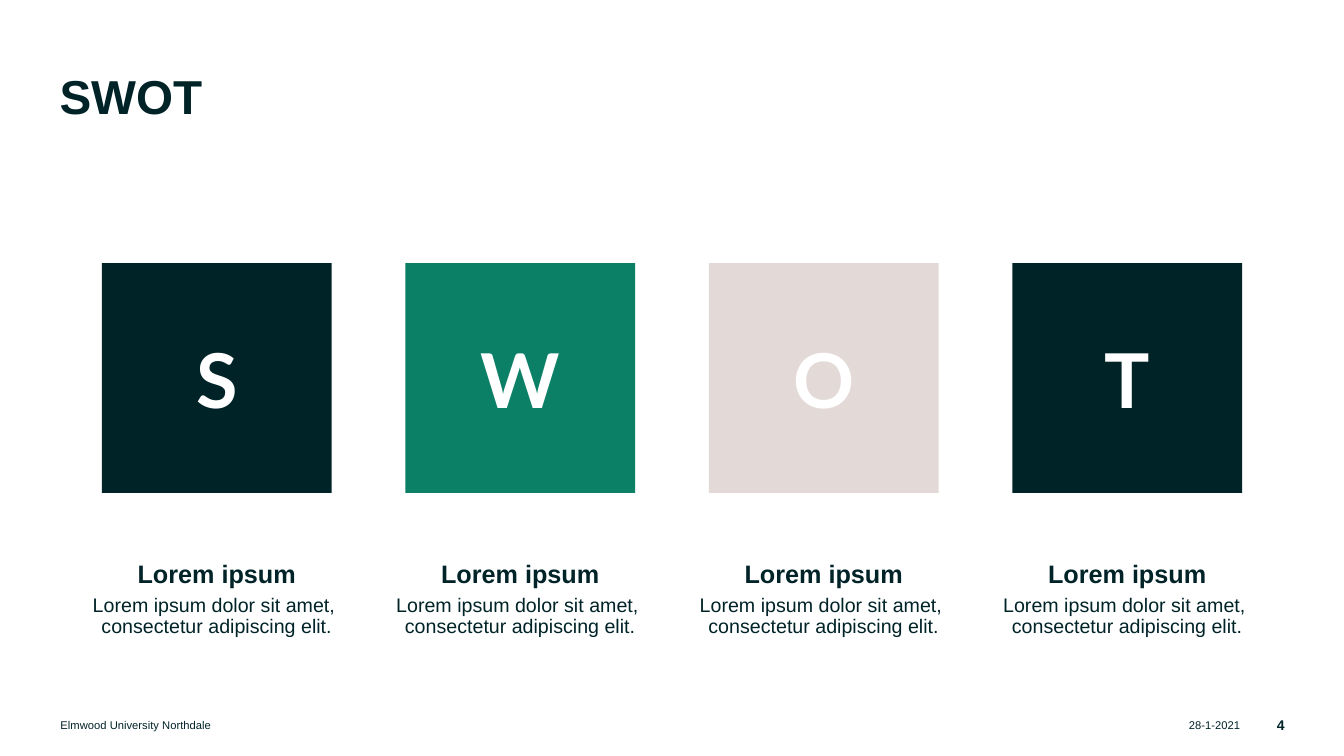
from copy import deepcopy

from pptx import Presentation
from pptx.dml.color import RGBColor
from pptx.enum.shapes import MSO_SHAPE as SHAPE
from pptx.enum.text import MSO_ANCHOR as ANCHOR, PP_ALIGN as ALIGN
from pptx.oxml.ns import qn
from pptx.util import Pt

PX = 9144  # 100 px to the inch
DARK, GREEN, SAND, WHITE = "002328", "0C8066", "E3DAD8", "FFFFFF"


def color(value):
    return RGBColor.from_string(value)


def write(sp, text, size, font="Arial", fill=DARK, bold=False, align=ALIGN.LEFT,
          anchor=ANCHOR.TOP, inset=0, spacing=None, before=0, more=False):
    """Write one paragraph into a shape; more=True adds it below the last."""
    tf = sp.text_frame
    tf.word_wrap = True
    tf.vertical_anchor = anchor
    tf.margin_left = tf.margin_top = tf.margin_right = tf.margin_bottom = inset * PX
    p = tf.add_paragraph() if more else tf.paragraphs[0]
    p.text = text
    p.alignment = align
    p.line_spacing = spacing
    p.space_before = Pt(before)
    for r in p.runs:
        r.font.name, r.font.size, r.font.bold = font, Pt(size), bold
        r.font.color.rgb = color(fill)
    # Line breaks take the format of the text around them
    for br in p._p.findall(qn("a:br")):
        br.insert(0, deepcopy(p.runs[0]._r.rPr))


prs = Presentation()
prs.slide_width, prs.slide_height = 1333 * PX, 750 * PX
s = prs.slides.add_slide(prs.slide_layouts[6])

# Title
title = s.shapes.add_textbox(59 * PX, 79 * PX, 1215 * PX, 78 * PX)
write(title, "SWOT", 34, bold=True, spacing=Pt(32))

# Footer: date, organisation, slide number
for text, left, width, size, bold, align in [
    ("28-1-2021", 1154, 76, 8, False, ALIGN.RIGHT),
    ("Elmwood University Northdale", 60, 1079, 8, False, ALIGN.LEFT),
    ("4", 1245, 29, 10, True, ALIGN.RIGHT),
]:
    footer = s.shapes.add_textbox(left * PX, 712 * PX, width * PX, 14 * PX)
    write(footer, text, size, bold=bold, align=align, anchor=ANCHOR.MIDDLE)

# Four columns: lettered square with a caption below
for i, (letter, fill) in enumerate(zip("SWOT", [DARK, GREEN, SAND, DARK])):
    left = 101 + 301 * i
    square = s.shapes.add_shape(SHAPE.RECTANGLE, left * PX, 261 * PX, 228 * PX, 228 * PX)
    square.shadow.inherit = False
    square.fill.solid()
    square.fill.fore_color.rgb = color(fill)
    square.line.fill.background()
    write(square, letter, 54, font="Lato", fill=WHITE, bold=True,
          align=ALIGN.CENTER, anchor=ANCHOR.MIDDLE, inset=16)

    caption = s.shapes.add_textbox((left - 14) * PX, 555 * PX, 256 * PX, 78 * PX)
    layout = dict(align=ALIGN.CENTER, anchor=ANCHOR.BOTTOM, spacing=0.9, before=5)
    write(caption, "Lorem ipsum", 18, bold=True, **layout)
    write(caption, "Lorem ipsum dolor sit amet, \vconsectetur adipiscing elit.", 14,
          more=True, **layout)

prs.save("out.pptx")
